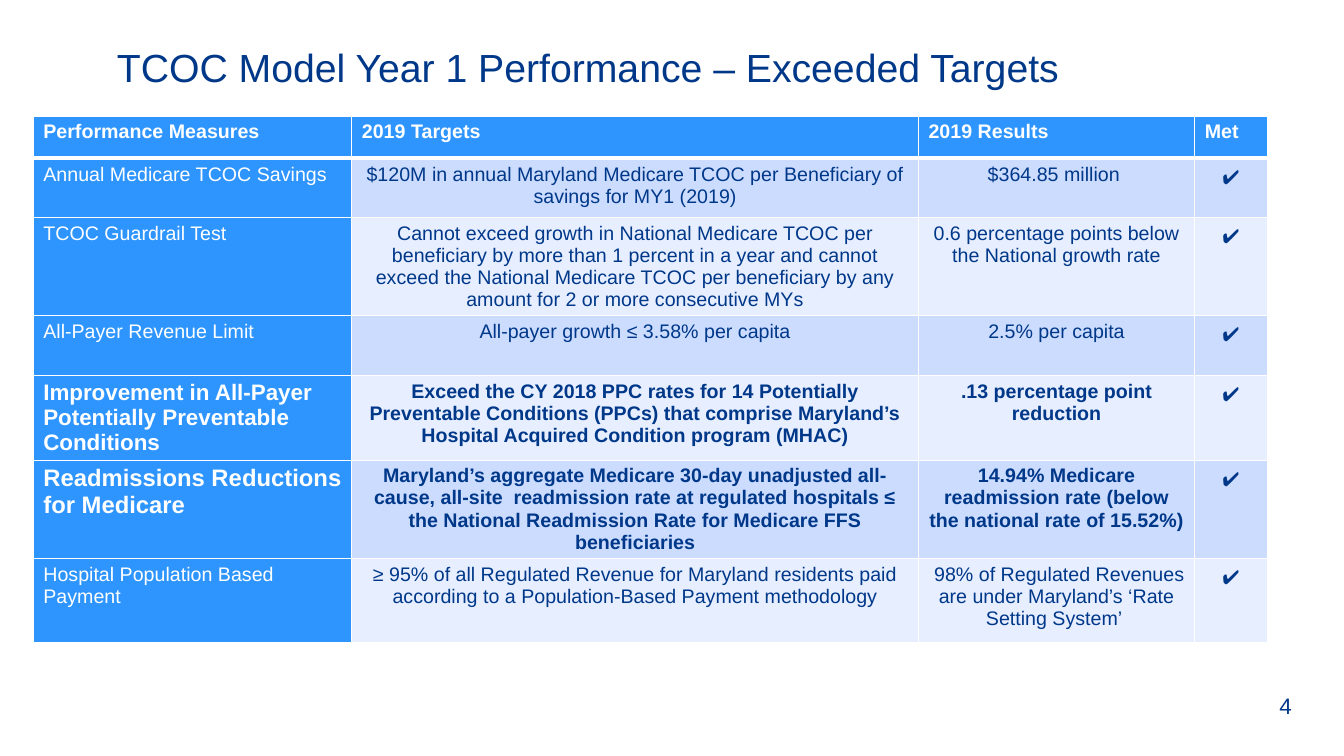
import lxml.etree
import pptx
import pptx.dml.color
import pptx.enum.text
import pptx.oxml.ns
import pptx.util

WIDTH, HEIGHT = 13.33, 7.5
NAVY, WHITE, BLUE = "003889", "FFFFFF", "2E95FF"
BANDS = ["CCDCFF", "E7EEFF"]
LEFT = pptx.enum.text.PP_ALIGN.LEFT
CENTER = pptx.enum.text.PP_ALIGN.CENTER
TICK = "✔"

COLUMN_WIDTHS = [3.16, 5.62, 2.74, 0.72]
ROW_HEIGHTS = [0.42, 0.59, 0.82, 0.59, 0.84, 0.59, 0.84]
HEADINGS = ["Performance Measures", "2019 Targets", "2019 Results", "Met"]
# Measure, target, result, size of the measure's name, bold row
MEASURES = [
    ("Annual Medicare TCOC Savings",
     "$120M in annual Maryland Medicare TCOC per Beneficiary of savings for MY1 (2019)",
     "$364.85 million ", 14, False),
    ("TCOC Guardrail Test",
     "Cannot exceed growth in National Medicare TCOC per beneficiary by more than "
     "1 percent in a year and cannot exceed the National Medicare TCOC per beneficiary "
     "by any amount for 2 or more consecutive MYs",
     "0.6 percentage points below the National growth rate", 14, False),
    ("All-Payer Revenue Limit", "All-payer growth ≤ 3.58% per capita",
     "2.5% per capita", 14, False),
    ("Improvement in All-Payer Potentially Preventable Conditions",
     "Exceed the CY 2018 PPC rates for 14 Potentially Preventable Conditions (PPCs) "
     "that comprise Maryland’s Hospital Acquired Condition program (MHAC)",
     ".13 percentage point reduction", 16, True),
    ("Readmissions Reductions for Medicare",
     "Maryland’s aggregate Medicare 30-day unadjusted all-cause, all-site  readmission "
     "rate at regulated hospitals ≤ the National Readmission Rate for Medicare FFS "
     "beneficiaries",
     "14.94% Medicare readmission rate (below the national rate of 15.52%)", 17, True),
    ("Hospital Population Based Payment",
     "≥ 95% of all Regulated Revenue for Maryland residents paid according to a "
     "Population-Based Payment methodology",
     " 98% of Regulated Revenues are under Maryland’s ‘Rate Setting System’ ", 14, False),
]


def color(code):
    return pptx.dml.color.RGBColor.from_string(code)


def inches(*lengths):
    return [pptx.util.Inches(length) for length in lengths]


def write(frame, text, size, code=NAVY, bold=False, name="Arial", align=LEFT):
    para = frame.paragraphs[0]
    para.alignment = align
    span = para.add_run()
    span.text = text
    formats = {"size": pptx.util.Pt(size), "bold": bold, "name": name}
    for key, value in formats.items():
        setattr(span.font, key, value)
    span.font.color.rgb = color(code)


def set_frame(frame, anchor):
    formats = {"word_wrap": True, "vertical_anchor": anchor,
               "auto_size": pptx.enum.text.MSO_AUTO_SIZE.NONE}
    for key, value in formats.items():
        setattr(frame, key, value)


def add_borders(cell, widths):
    """Draw white borders; widths maps the sides L, R, T and B to points."""
    properties = cell._tc.get_or_add_tcPr()
    qn = pptx.oxml.ns.qn
    for side, points in widths.items():
        line = lxml.etree.SubElement(properties, qn("a:ln" + side),
                                     w=str(pptx.util.Pt(points)))
        fill = lxml.etree.SubElement(line, qn("a:solidFill"))
        lxml.etree.SubElement(fill, qn("a:srgbClr"), val=WHITE)


def fill_cell(table, row, column, text, fill, **formats):
    cell = table.cell(row, column)
    add_borders(cell, {"L": 1, "R": 1, "T": 3 if row == 1 else 1,
                       "B": 3 if row == 0 else 1})
    cell.fill.solid()
    cell.fill.fore_color.rgb = color(fill)
    write(cell.text_frame, text, **formats)


def add_title(page, text):
    title = page.shapes.title
    title.left, title.top, title.width, title.height = inches(1.06, 0.38, 11.5, 0.66)
    set_frame(title.text_frame, pptx.enum.text.MSO_ANCHOR.TOP)
    write(title.text_frame, text, 28)


def add_page_number(page, number):
    box = page.shapes.add_textbox(*inches(12.59, 6.8, 0.63, 0.4))
    set_frame(box.text_frame, pptx.enum.text.MSO_ANCHOR.MIDDLE)
    write(box.text_frame, number, 16)


def add_performance_table(page):
    table = page.shapes.add_table(
        len(ROW_HEIGHTS), len(COLUMN_WIDTHS),
        *inches(0.33, 1.15, sum(COLUMN_WIDTHS), sum(ROW_HEIGHTS))).table
    for column, width in zip(table.columns, COLUMN_WIDTHS):
        column.width = pptx.util.Inches(width)
    for row, height in zip(table.rows, ROW_HEIGHTS):
        row.height = pptx.util.Inches(height)
    for column, heading in enumerate(HEADINGS):
        fill_cell(table, 0, column, heading, BLUE, size=14, code=WHITE, bold=True)
    for row, (measure, target, result, size, bold) in enumerate(MEASURES, start=1):
        band = BANDS[(row - 1) % 2]
        fill_cell(table, row, 0, measure, BLUE, size=size, code=WHITE, bold=bold)
        for column, text in enumerate([target, result, TICK], start=1):
            fill_cell(table, row, column, text, band, size=14, bold=bold, align=CENTER,
                      name="Open Sans" if text == TICK else "Arial")


def main():
    deck = pptx.Presentation()
    deck.slide_width, deck.slide_height = inches(WIDTH, HEIGHT)
    page = deck.slides.add_slide(deck.slide_layouts.get_by_name("Title Only"))
    add_page_number(page, "4")
    add_title(page, "TCOC Model Year 1 Performance – Exceeded Targets")
    add_performance_table(page)
    deck.save("out.pptx")


if __name__ == "__main__":
    main()
